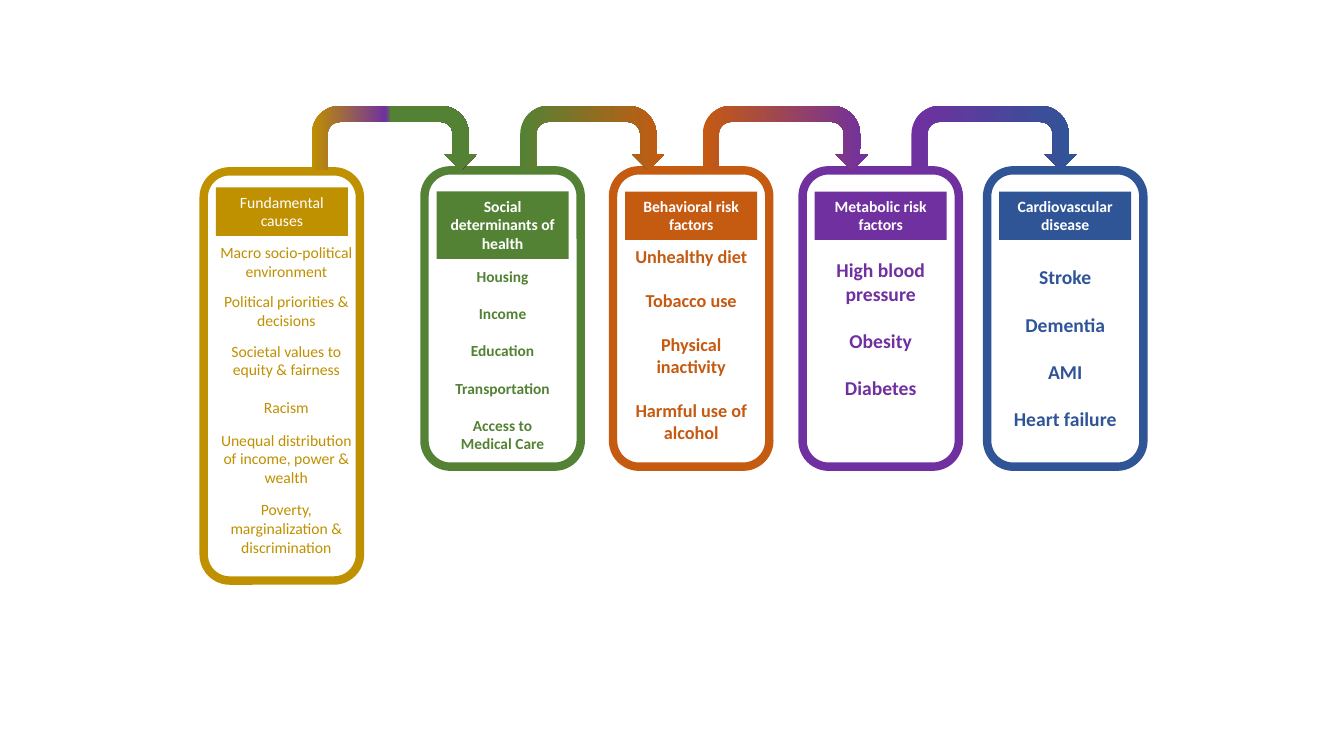
from lxml import etree
from pptx import Presentation
from pptx.dml.color import RGBColor
from pptx.enum import shapes, text
from pptx.oxml import ns
from pptx.util import Inches, Pt

FONT = "Calibri"
GOLD, GREEN, RUST = "BF9000", "548235", "C55A11"
PLUM, NAVY = "7030A0", "2F5597"
HEAD = 11.2
LINE = 1.22

COLS = [
    dict(hue=RUST, left=6.08, title="Behavioral risk factors", top=2.38, size=13,
         rows=["Unhealthy diet", "Tobacco use", "Physical inactivity",
               "Harmful use of alcohol"]),
    dict(hue=GREEN, left=4.21, title="Social determinants of health", deep=0.67,
         top=2.6, size=11,
         rows=["Housing", "Income", "Education", "Transportation",
               "Access to Medical Care"]),
    dict(hue=PLUM, left=7.96, title="Metabolic risk factors", top=2.51, size=14,
         rows=["High blood pressure", "Obesity", "Diabetes"]),
    dict(hue=NAVY, left=9.79, title="Cardiovascular disease", top=2.58, size=14,
         rows=["Stroke", "Dementia", "AMI", "Heart failure"]),
    dict(hue=GOLD, left=2.02, title="Fundamental causes", top=2.36, size=HEAD,
         y=1.7, tall=4.06, head=1.86, bold=False, wide=1.64, shift=0,
         gaps=[0, 6.8, 6.8, 11.2, 7.9, 7.9],
         rows=["Macro socio-political environment",
               "Political priorities & decisions",
               "Societal values to equity & fairness", "Racism",
               "Unequal distribution of income, power & wealth",
               "Poverty, marginalization & discrimination"]),
]
ARROWS = [
    (5.16, 1.43, [(0, GREEN), (100, RUST)]),
    (6.97, 1.64, [(0, RUST), (100, PLUM)]),
    (9.04, 1.64, [(0, PLUM), (100, NAVY)]),
    (3.09, 1.64, [(0, GOLD), (45, PLUM), (48, GREEN), (100, GREEN)]),
]


def paint(item, hue):
    item.rgb = RGBColor.from_string(hue)


def shape(host, kind, *box):
    item = host.add_shape(kind, *map(Inches, box))
    item.shadow.inherit = False
    item.line.fill.background()
    return item


def write(item, rows, size, hue, bold, gaps):
    frame = item.text_frame
    frame.word_wrap = True
    frame.vertical_anchor = text.MSO_ANCHOR.TOP
    for i, (row, gap) in enumerate(zip(rows, gaps)):
        para = frame.paragraphs[0] if i == 0 else frame.add_paragraph()
        para.alignment = text.PP_ALIGN.CENTER
        para.space_before = Pt(round(gap * LINE, 1))
        run = para.add_run()
        run.text = row
        run.font.name, run.font.size, run.font.bold = FONT, Pt(size), bold
        paint(run.font.color, hue)


def column(host, hue, left, title, top, size, rows, y=1.69, tall=2.94, head=1.9,
           deep=0.48, bold=True, wide=1.31, shift=0.12, gaps=None):
    group = host.add_group_shape().shapes
    panel = shape(group, shapes.MSO_SHAPE.ROUNDED_RECTANGLE, left, y, 1.55, tall)
    panel.fill.background()
    paint(panel.line.color, hue)
    panel.line.width = Pt(6)
    label = shape(group, shapes.MSO_SHAPE.RECTANGLE, left + 0.12, head, 1.31, deep)
    label.fill.solid()
    paint(label.fill.fore_color, hue)
    write(label, [title], HEAD, "FFFFFF", bold, [0])
    gaps = gaps or [0] + [size] * (len(rows) - 1)
    high = y + tall - top - 0.12
    body = group.add_textbox(*map(Inches, (left + shift, top, wide, high)))
    write(body, rows, size, hue, bold, gaps)


def arrow(host, left, wide, stops):
    item = shape(host, shapes.MSO_SHAPE.U_TURN_ARROW, left, 1.05, wide, 0.64)
    for i, value in enumerate([0.25, 0.25, 0.25, 0.44, 1]):
        item.adjustments[i] = value
    item.fill.gradient()
    item.fill.gradient_angle = 0
    ramp = item._element.spPr.find(ns.qn("a:gradFill")).find(ns.qn("a:gsLst"))
    for old in list(ramp):
        ramp.remove(old)
    for spot, hue in stops:
        stop = etree.SubElement(ramp, ns.qn("a:gs"), pos=str(spot * 1000))
        etree.SubElement(stop, ns.qn("a:srgbClr"), val=hue)


def main():
    deck = Presentation()
    deck.slide_width, deck.slide_height = Inches(13.33), Inches(7.5)
    host = deck.slides.add_slide(deck.slide_layouts[6]).shapes
    for col in COLS:
        column(host, **col)
    for item in ARROWS:
        arrow(host, *item)
    deck.save("out.pptx")


if __name__ == "__main__":
    main()
